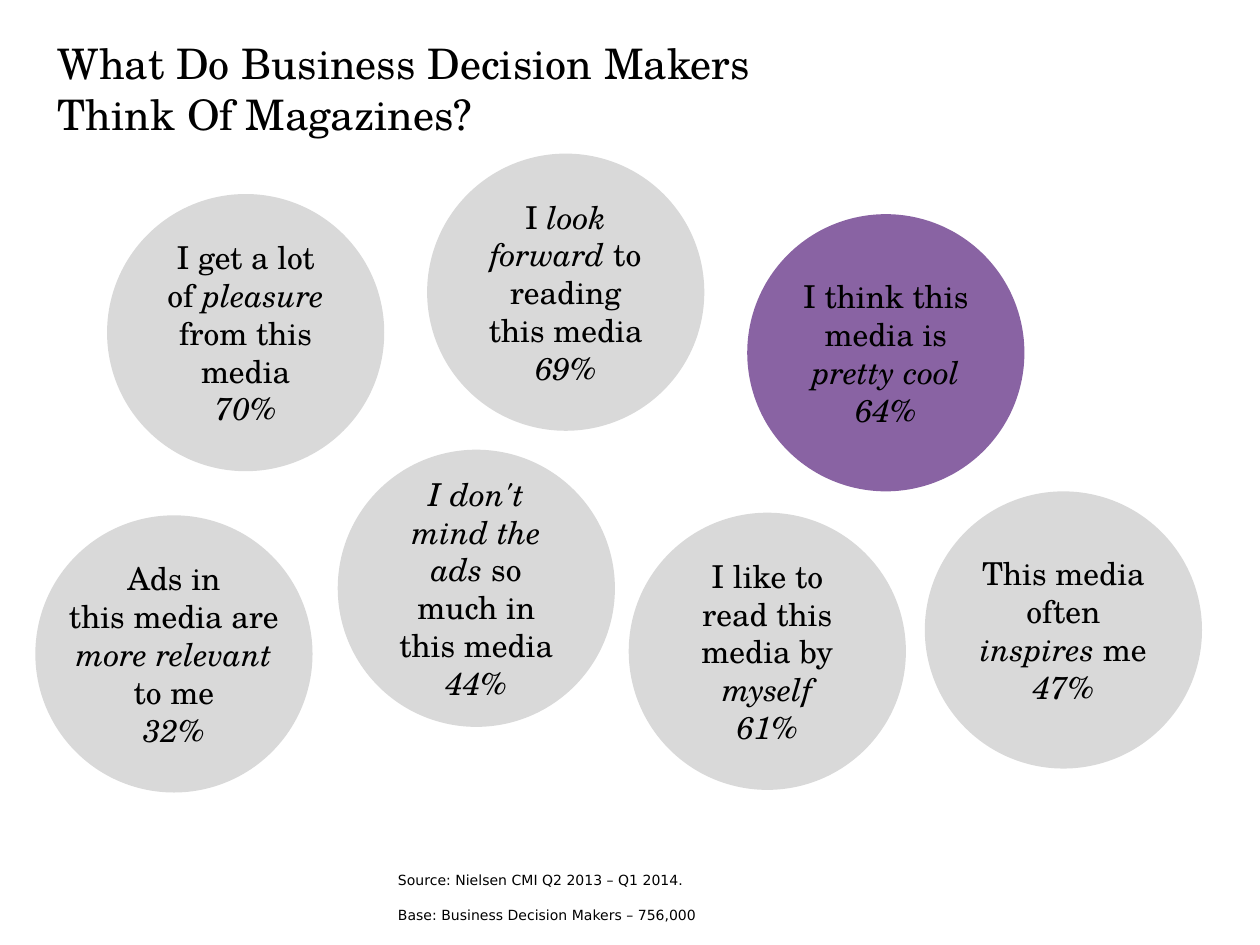
from pptx import Presentation
from pptx.dml.color import RGBColor
from pptx.enum import shapes, text
from pptx.util import Pt

COLORS = {"text": "000000", "plain": "D9D9D9", "highlight": "8963A3"}
SERIF, SANS = "TeX Gyre Schola", "DejaVu Sans"
DIAMETER = 158.4

TITLE = ["What Do Business Decision Makers", "Think Of Magazines?"]
# Opinion (italics between asterisks), share, left, top, fill
OPINIONS = [
    ("I get a lot of* pleasure *from this media", "70%", 61.2, 110.9, "plain"),
    ("I *look forward *to reading this media", "69%", 244.1, 87.8, "plain"),
    ("I think this media is *pretty cool*", "64%", 427, 122.4, "highlight"),
    ("I like to read this media by *myself*", "61%", 359.3, 293, "plain"),
    ("This media often *inspires *me", "47%", 528.5, 280.8, "plain"),
    ("*I don't mind the ads *so much in this media", "44%", 193, 257, "plain"),
    ("Ads in\nthis media are\n*more relevant\n*to me", "32%", 20.2, 294.5, "plain"),
]
SOURCE = ["Source: Nielsen CMI Q2 2013 – Q1 2014.",
          "Base: Business Decision Makers – 756,000"]


def rgb(name):
    return RGBColor.from_string(COLORS[name])


def write(frame, paragraphs, size, font=SERIF, align=text.PP_ALIGN.LEFT,
          anchor=text.MSO_ANCHOR.TOP, wrap=True, insets=(7.2, 0), gap=0):
    """Fill a text frame; *...* is italic and a newline is a line break."""
    frame.auto_size = text.MSO_AUTO_SIZE.NONE
    frame.word_wrap = wrap
    frame.vertical_anchor = anchor
    frame.margin_left = frame.margin_right = Pt(insets[0])
    frame.margin_top = frame.margin_bottom = Pt(insets[1])
    for number, content in enumerate(paragraphs):
        paragraph = frame.add_paragraph() if number else frame.paragraphs[0]
        paragraph.alignment = align
        paragraph.space_before = Pt(gap if number else 0)
        for part, phrase in enumerate(content.split("*")):
            for row, line in enumerate(phrase.split("\n")):
                if row:
                    paragraph.add_line_break()
                if line:
                    run = paragraph.add_run()
                    run.text = line
                    run.font.name = font
                    run.font.size = Pt(size)
                    run.font.italic = part % 2 == 1
                    run.font.color.rgb = rgb("text")


deck = Presentation()
deck.slide_width, deck.slide_height = Pt(720), Pt(540)
slide = deck.slides.add_slide(deck.slide_layouts[5])

# Title
title = slide.shapes.title
title.left, title.top, title.width, title.height = Pt(25.9), Pt(5), Pt(536.4), Pt(74.2)
write(title.text_frame, TITLE, 24, anchor=text.MSO_ANCHOR.BOTTOM)

# Opinion circles
for opinion, share, left, top, fill in OPINIONS:
    circle = slide.shapes.add_shape(shapes.MSO_SHAPE.OVAL, Pt(left), Pt(top),
                                    Pt(DIAMETER), Pt(DIAMETER))
    circle.shadow.inherit = False
    circle.fill.solid()
    circle.fill.fore_color.rgb = rgb(fill)
    circle.line.fill.background()
    write(circle.text_frame, [opinion, f"*{share}*"], 18,
          align=text.PP_ALIGN.CENTER, anchor=text.MSO_ANCHOR.MIDDLE,
          wrap="\n" not in opinion, insets=(7.2, 3.6))

# Source note
source = slide.shapes.add_textbox(Pt(220.3), Pt(498.2), Pt(642.2), Pt(24.5))
write(source.text_frame, SOURCE, 8, font=SANS, gap=10)

deck.save("out.pptx")
